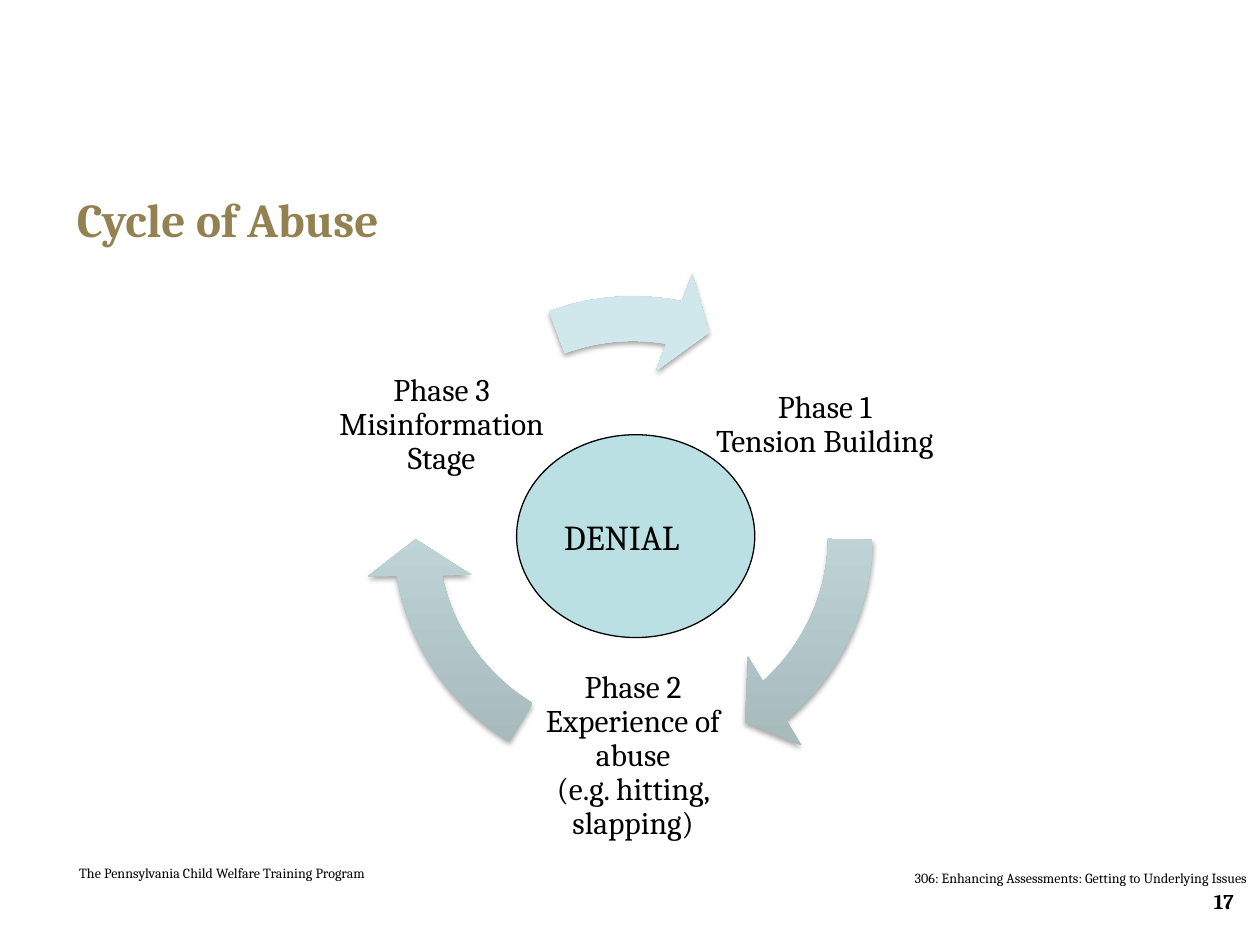
from copy import deepcopy

from lxml import etree
from pptx import Presentation
from pptx.dml.color import RGBColor
from pptx.enum.shapes import MSO_SHAPE
from pptx.enum.text import MSO_ANCHOR, PP_ALIGN
from pptx.oxml.ns import qn
from pptx.util import Pt

LEFT, CENTER, RIGHT = PP_ALIGN.LEFT, PP_ALIGN.CENTER, PP_ALIGN.RIGHT
TOP, MIDDLE = MSO_ANCHOR.TOP, MSO_ANCHOR.MIDDLE
ARROW, OVAL = MSO_SHAPE.CIRCULAR_ARROW, MSO_SHAPE.OVAL

FONT = "Cambria"
BLACK = RGBColor(0x00, 0x00, 0x00)
GOLD = RGBColor(0x94, 0x81, 0x51)
AQUA = RGBColor(0xBB, 0xE0, 0xE3)
STOPS = [
    (0, RGBColor(0xA0, 0xB3, 0xB5)),
    (0.8, RGBColor(0xD0, 0xE8, 0xEB)),
    (1, RGBColor(0xD1, 0xEA, 0xEC)),
]

PHASES = [
    (406.1, 177.8, "Phase 1\nTension Building"),
    (296.6, 367.2, "Phase 2\nExperience of abuse\n(e.g. hitting, slapping)"),
    (187.2, 177.8, "Phase 3\nMisinformation Stage"),
]
# Head and tail angles of each arrow, in degrees
ARCS = [(49.36, 0.89), (169.5, 121.03), (280.91, 249.48)]
UNIT = 0.6  # one degree as an adjustment value


def write(shape, text, size, color=BLACK, bold=False, align=LEFT,
          anchor=TOP, inset=None, spacing=None):
    frame = shape.text_frame
    frame.word_wrap = True
    frame.vertical_anchor = anchor
    if inset is not None:
        frame.margin_left = frame.margin_right = Pt(inset)
        frame.margin_top = frame.margin_bottom = Pt(inset)
    para = frame.paragraphs[0]
    para.text = text.replace("\n", "\v")
    para.alignment = align
    if spacing:
        para.line_spacing = spacing
    font = para.font
    font.name, font.size, font.bold = FONT, Pt(size), bold
    font.color.rgb = color


def add_text(slide, box, text, size, **style):
    shape = slide.shapes.add_textbox(*map(Pt, box))
    write(shape, text, size, **style)


def add_title(slide, box, text):
    title = slide.shapes.title
    title.left, title.top, title.width, title.height = map(Pt, box)
    write(title, text, 27, color=GOLD, bold=True, anchor=MIDDLE)


def add_shade(shape):
    """Give the shape a soft shadow straight below it."""
    shape.shadow.inherit = False
    effects = shape._element.spPr.find(qn("a:effectLst"))
    shade = etree.SubElement(effects, qn("a:outerShdw"), blurRad=str(Pt(3.1)),
                             dist=str(Pt(1.8)), dir="5400000", rotWithShape="0")
    color = etree.SubElement(shade, qn("a:srgbClr"), val=str(BLACK))
    etree.SubElement(color, qn("a:alpha"), val="35000")


def fill_fade(shape):
    fill = shape.fill
    fill.gradient()
    fill.gradient_angle = 90
    items = shape._element.spPr.find(qn("a:gradFill")).find(qn("a:gsLst"))
    items.append(deepcopy(items[-1]))
    for stop, (place, color) in zip(fill.gradient_stops, STOPS):
        stop.position = place
        stop.color.rgb = color


def add_arrow(slide, head, tail):
    shape = slide.shapes.add_shape(
        ARROW, Pt(208.1), Pt(152.6), Pt(307.4), Pt(307.4))
    values = (0.083, 9.61 * UNIT, head * UNIT, tail * UNIT, 0.096)
    for index, value in enumerate(values):
        shape.adjustments[index] = value
    fill_fade(shape)
    shape.line.fill.background()
    add_shade(shape)


def add_core(slide, box, text):
    shape = slide.shapes.add_shape(OVAL, *map(Pt, box))
    shape.shadow.inherit = False
    shape.fill.solid()
    shape.fill.fore_color.rgb = AQUA
    shape.line.color.rgb = BLACK
    shape.line.width = Pt(0.75)
    write(shape, text, 20, anchor=MIDDLE)


def main():
    deck = Presentation()
    deck.slide_width, deck.slide_height = Pt(720), Pt(540)
    slide = deck.slides.add_slide(deck.slide_layouts[5])

    add_text(slide, (352.8, 493.2, 367.2, 17.3),
             "306: Enhancing Assessments: Getting to Underlying Issues",
             8, align=RIGHT)
    add_text(slide, (38.2, 490.3, 259.2, 17.3),
             "The Pennsylvania Child Welfare Training Program", 8)
    add_title(slide, (36.7, 101.5, 648, 46.8), "Cycle of Abuse")

    for (left, top, text), (head, tail) in zip(PHASES, ARCS):
        add_text(slide, (left, top, 130.3, 130.3), text, 18, align=CENTER,
                 anchor=MIDDLE, inset=2, spacing=0.9)
        add_arrow(slide, head, tail)

    add_text(slide, (632.2, 507.6, 79.9, 15.1), "17", 12, bold=True,
             align=RIGHT, anchor=MIDDLE)
    add_core(slide, (295.2, 248.4, 136.1, 115.9), "DENIAL")
    deck.save("out.pptx")


if __name__ == "__main__":
    main()
